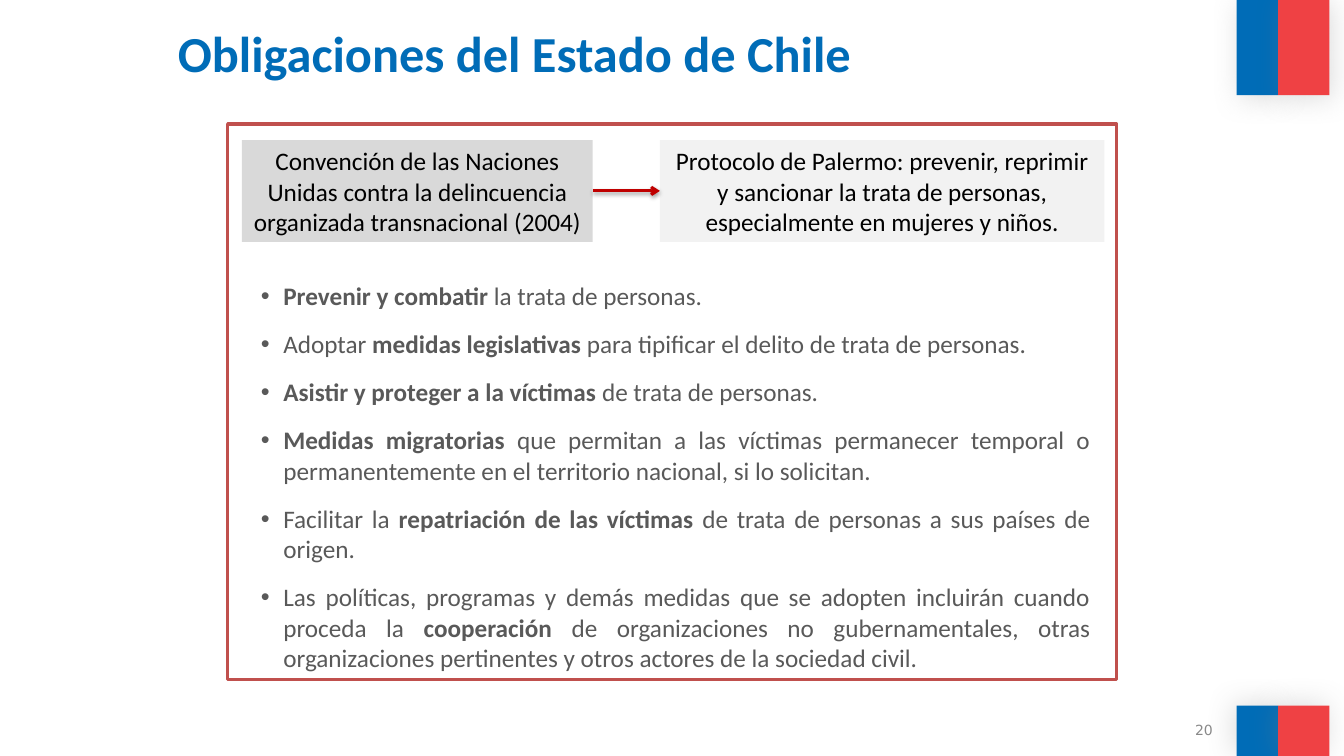
from lxml import etree
from pptx import Presentation
from pptx.dml.color import RGBColor
from pptx.enum.shapes import MSO_CONNECTOR, MSO_SHAPE
from pptx.enum.text import MSO_ANCHOR, PP_ALIGN
from pptx.oxml import parse_xml
from pptx.oxml.ns import qn
from pptx.util import Pt

RECTANGLE = MSO_SHAPE.RECTANGLE
STRAIGHT = MSO_CONNECTOR.STRAIGHT
CENTER, JUSTIFY, RIGHT = PP_ALIGN.CENTER, PP_ALIGN.JUSTIFY, PP_ALIGN.RIGHT
MIDDLE = MSO_ANCHOR.MIDDLE
DRAWING_NS = "http://schemas.openxmlformats.org/drawingml/2006/main"
COLORS = {
    "blue": "006CB7", "red": "EF4144", "gray": "898989", "text": "595959",
    "black": "000000", "light": "F2F2F2", "silver": "D9D9D9",
    "frame": "C0504D", "arrow": "C00000", "flag_shadow": "808080",
}


def cast_shadow(drawn, color, opacity, blur, distance, angle):
    """Append an outer shadow; lengths in points, opacity in percent."""
    drawn._element.spPr.append(parse_xml(
        f'<a:effectLst xmlns:a="{DRAWING_NS}"><a:outerShdw blurRad="{Pt(blur)}" '
        f'dist="{Pt(distance)}" dir="{angle * 60000}" rotWithShape="0">'
        f'<a:srgbClr val="{COLORS[color]}"><a:alpha val="{opacity * 1000}"/>'
        f'</a:srgbClr></a:outerShdw></a:effectLst>'))


def add_run(paragraph, text, size, color, bold=False, font="Calibri"):
    run = paragraph.add_run()
    run.text = text
    run.font.name = font
    run.font.size = Pt(size)
    run.font.bold = bold
    run.font.color.rgb = RGBColor.from_string(COLORS[color])


prs = Presentation()
prs.slide_width, prs.slide_height = Pt(960), Pt(540)
slide = prs.slides.add_slide(prs.slide_layouts[6])
shapes = slide.shapes

# Flag bands in the top and bottom right corners
for top, height, angle in ((0, 68, 45), (504, 36, 215)):
    for left, width, color in ((883.4, 29.6, "blue"), (913, 36.6, "red")):
        band = shapes.add_shape(RECTANGLE, Pt(left), Pt(top), Pt(width), Pt(height))
        band.fill.solid()
        band.fill.fore_color.rgb = RGBColor.from_string(COLORS[color])
        band.line.fill.background()
        cast_shadow(band, "flag_shadow", 25, 20, 3, angle)

# Page number and title
page_number = shapes.add_textbox(Pt(649.4), Pt(514), Pt(224), Pt(15)).text_frame
page_number.word_wrap = True
page_number.vertical_anchor = MIDDLE
page_number.paragraphs[0].alignment = RIGHT
add_run(page_number.paragraphs[0], "20", 10, "gray", font="DejaVu Sans")

title = shapes.add_textbox(Pt(120), Pt(12.2), Pt(655), Pt(60.5)).text_frame
title.word_wrap = True
add_run(title.paragraphs[0], "Obligaciones del Estado de Chile", 36, "blue", bold=True)

# Obligations: each one is a list of (text, bold) pieces
OBLIGATIONS = [
    [("Prevenir y combatir ", True), ("la trata de personas.", False)],
    [("Adoptar ", False), ("medidas legislativas ", True),
     ("para tipificar el delito de trata de personas.", False)],
    [("Asistir y proteger a la víctimas ", True), ("de trata de personas.", False)],
    [("Medidas migratorias ", True),
     ("que permitan a las víctimas permanecer temporal o permanentemente "
      "en el territorio nacional, si lo solicitan.", False)],
    [("Facilitar la ", False), ("repatriación de las víctimas ", True),
     ("de trata de personas a sus países de origen.", False)],
    [("Las políticas, programas y demás medidas que se adopten incluirán "
      "cuando proceda la ", False), ("cooperación", True),
     (" de organizaciones no gubernamentales, otras organizaciones "
      "pertinentes y otros actores de la sociedad civil.", False)],
]
obligations = shapes.add_textbox(Pt(172.8), Pt(196.6), Pt(613.2), Pt(288.7)).text_frame
obligations.word_wrap = True
for index, pieces in enumerate(OBLIGATIONS):
    obligation = obligations.paragraphs[0] if index == 0 else obligations.add_paragraph()
    obligation.alignment = JUSTIFY
    if index:
        obligation.space_before = Pt(12.8)
    properties = obligation._p.get_or_add_pPr()
    properties.set("marL", str(Pt(22.5)))
    properties.set("indent", str(-Pt(16)))
    etree.SubElement(properties, qn("a:buFont")).set("typeface", "Arial")
    etree.SubElement(properties, qn("a:buChar")).set("char", "•")
    for text, bold in pieces:
        add_run(obligation, text, 18, "text", bold)

# Convention and the protocol that follows from it
treaties = []
for left, width, color, text in (
    (172.8, 250.6, "silver", "Convención de las Naciones Unidas contra la "
     "delincuencia organizada transnacional (2004)"),
    (471.4, 317.5, "light", "Protocolo de Palermo: prevenir, reprimir y sancionar "
     "la trata de personas, especialmente en mujeres y niños."),
):
    treaty = shapes.add_shape(RECTANGLE, Pt(left), Pt(100), Pt(width), Pt(72.7))
    treaty.shadow.inherit = False
    treaty.fill.solid()
    treaty.fill.fore_color.rgb = RGBColor.from_string(COLORS[color])
    treaty.line.fill.background()
    treaty.text_frame.word_wrap = True
    treaty.text_frame.paragraphs[0].alignment = CENTER
    add_run(treaty.text_frame.paragraphs[0], text, 18, "black")
    treaties.append(treaty)
convention, protocol = treaties

frame = shapes.add_shape(RECTANGLE, Pt(162.6), Pt(88.6), Pt(635), Pt(396.8))
frame.shadow.inherit = False
frame.fill.background()
frame.line.color.rgb = RGBColor.from_string(COLORS["frame"])
frame.line.width = Pt(2.25)

arrow = shapes.add_connector(STRAIGHT, Pt(423.4), Pt(136.35), Pt(471.4), Pt(136.35))
arrow.begin_connect(convention, 3)
arrow.end_connect(protocol, 1)
arrow.line.color.rgb = RGBColor.from_string(COLORS["arrow"])
arrow.line.width = Pt(2)
etree.SubElement(arrow.line._get_or_add_ln(), qn("a:tailEnd")).set("type", "arrow")
cast_shadow(arrow, "black", 38, 3.1, 1.6, 90)

prs.save("out.pptx")
